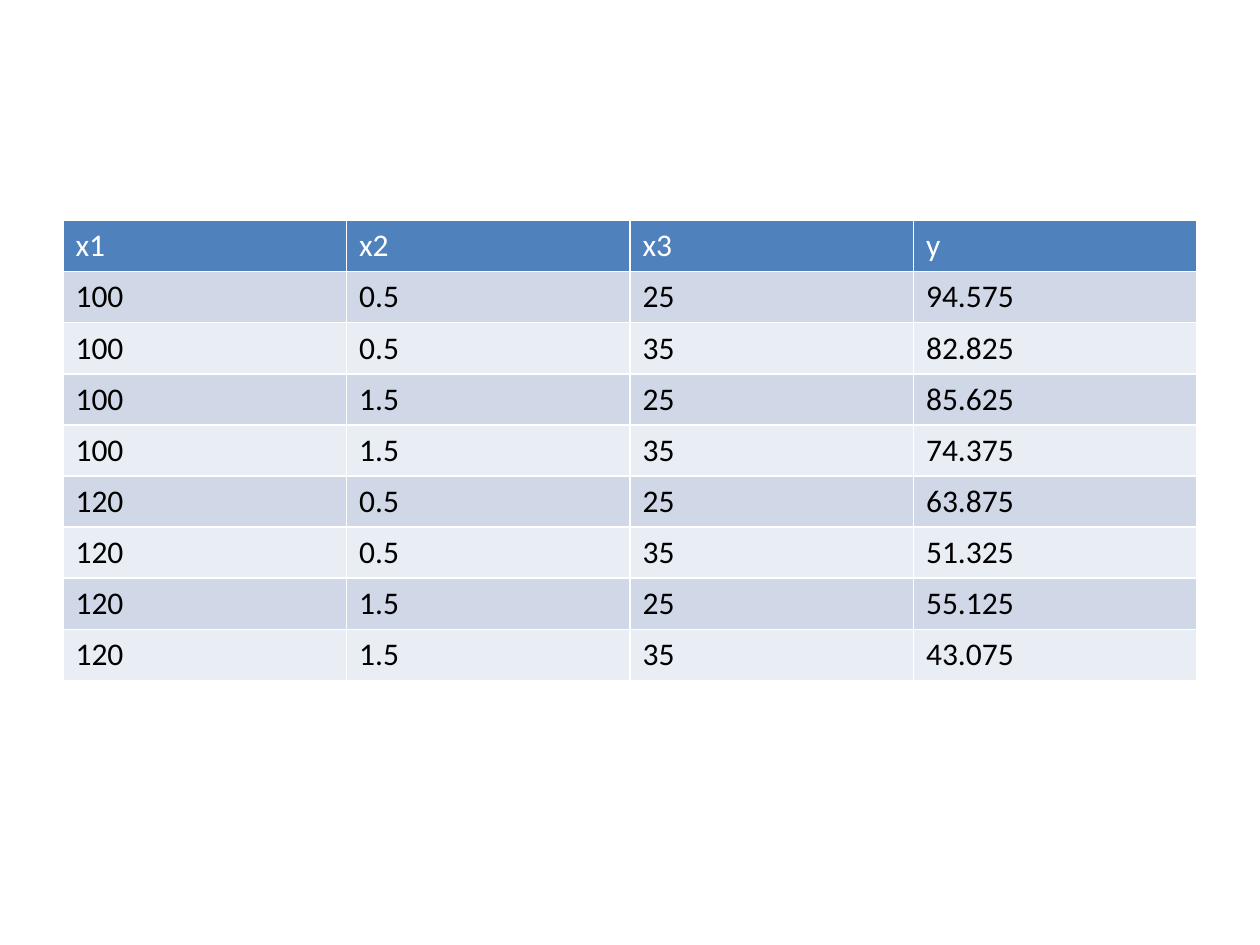
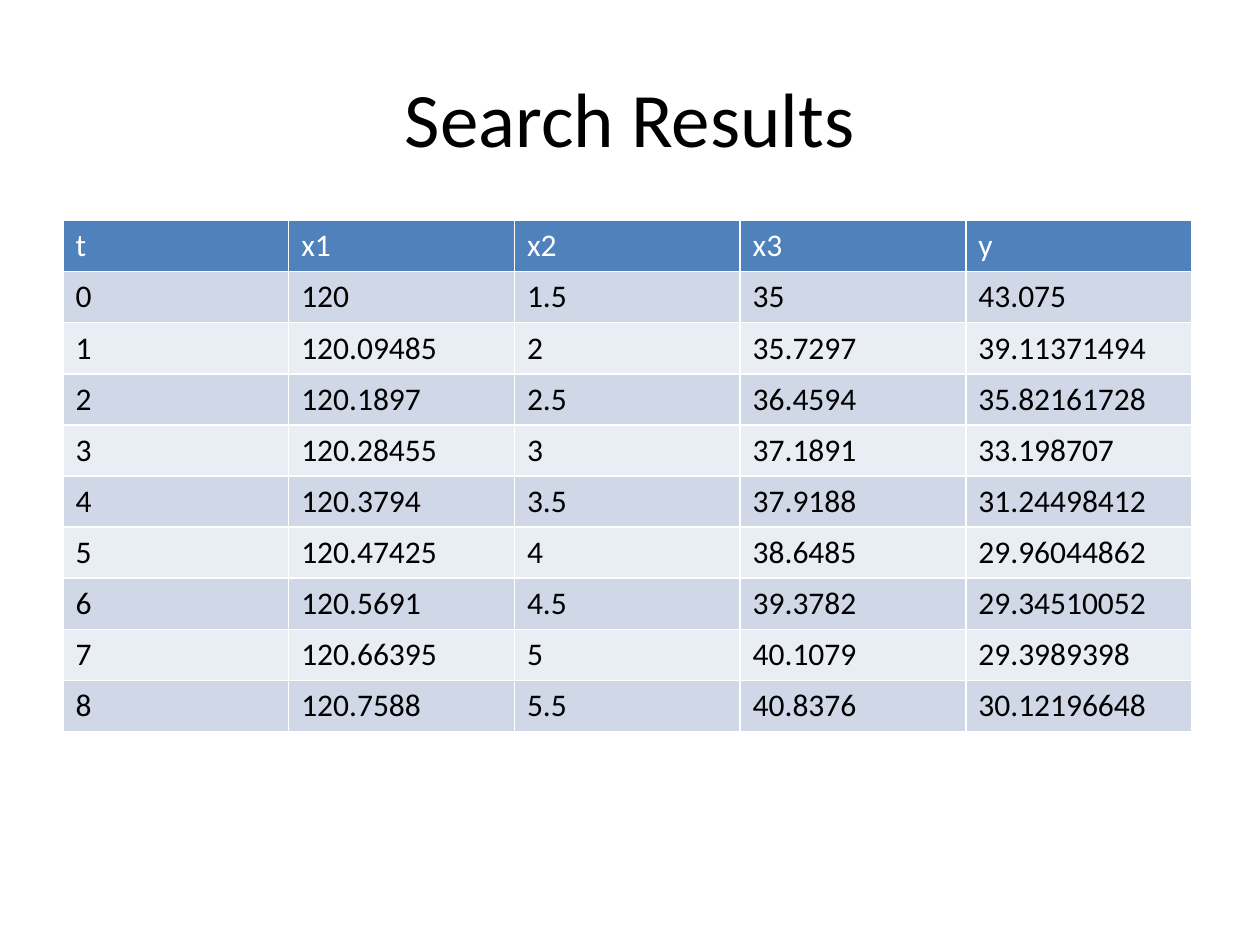
from pptx import Presentation
from pptx.dml.color import RGBColor
from pptx.enum import text
from pptx.util import Pt

COLORS = {"header": "4F81BD", "odd": "D0D8E8", "even": "E9EDF4",
          "light": "FFFFFF", "dark": "000000"}

DESIGN_POINTS = """
x1 x2 x3 y
100 0.5 25 94.575
100 0.5 35 82.825
100 1.5 25 85.625
100 1.5 35 74.375
120 0.5 25 63.875
120 0.5 35 51.325
120 1.5 25 55.125
120 1.5 35 43.075
"""

SEARCH_STEPS = """
t x1 x2 x3 y
0 120 1.5 35 43.075
1 120.09485 2 35.7297 39.11371494
2 120.1897 2.5 36.4594 35.82161728
3 120.28455 3 37.1891 33.198707
4 120.3794 3.5 37.9188 31.24498412
5 120.47425 4 38.6485 29.96044862
6 120.5691 4.5 39.3782 29.34510052
7 120.66395 5 40.1079 29.3989398
8 120.7588 5.5 40.8376 30.12196648
"""


class Deck:
    font = "Calibri"
    left, table_top, row_height = 36, 126, 29.2
    title_only, blank = 5, 6

    def __init__(self):
        self.prs = Presentation()
        self.prs.slide_width, self.prs.slide_height = Pt(720), Pt(540)
        self.s = None

    def color(self, name):
        return RGBColor.from_string(COLORS[name])

    def slide(self, title=None):
        layout = self.title_only if title else self.blank
        self.s = self.prs.slides.add_slide(self.prs.slide_layouts[layout])
        if title:
            self.title(title)

    def run(self, p, words, size, color):
        r = p.add_run()
        r.text = words
        fmt = {"name": self.font, "size": Pt(size), "bold": False}
        for key, value in fmt.items():
            setattr(r.font, key, value)
        r.font.color.rgb = self.color(color)

    def title(self, words):
        sp = self.s.shapes.title
        box = {"left": self.left, "top": 21.6, "width": 648, "height": 90}
        for key, value in box.items():
            setattr(sp, key, Pt(value))
        tf = sp.text_frame
        tf.vertical_anchor = text.MSO_ANCHOR.MIDDLE
        p = tf.paragraphs[0]
        p.alignment = text.PP_ALIGN.CENTER
        self.run(p, words, 44, "dark")

    def table(self, data, width):
        rows = [line.split() for line in data.strip().splitlines()]
        frame = self.s.shapes.add_table(
            len(rows), len(rows[0]), Pt(self.left), Pt(self.table_top),
            Pt(width), Pt(self.row_height * len(rows)))
        for i, row in enumerate(rows):
            fill = ("odd" if i % 2 else "even") if i else "header"
            for j, value in enumerate(row):
                cell = frame.table.cell(i, j)
                cell.fill.solid()
                cell.fill.fore_color.rgb = self.color(fill)
                self.run(cell.text_frame.paragraphs[0], value, 18,
                         "dark" if i else "light")


def main():
    deck = Deck()
    deck.slide()
    deck.table(DESIGN_POINTS, 648)
    deck.slide("Search Results")
    deck.table(SEARCH_STEPS, 645)
    deck.prs.save("out.pptx")


if __name__ == "__main__":
    main()
